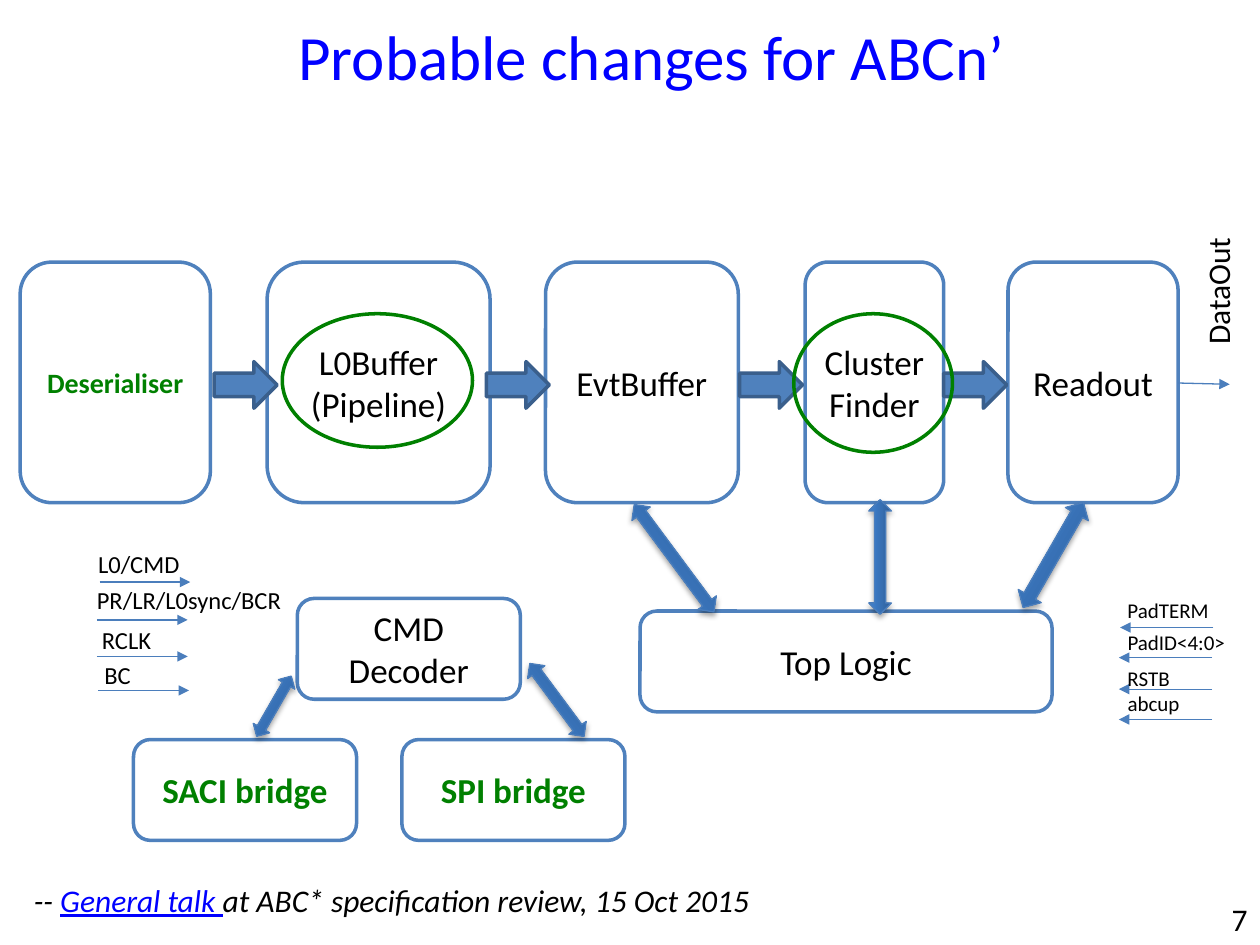
from copy import deepcopy

from lxml import etree
from pptx import Presentation
from pptx.dml.color import RGBColor
from pptx.enum import shapes as kinds, text as align
from pptx.oxml.ns import qn
from pptx.util import Inches, Pt

THEME = {
    "font": "Calibri",
    "black": "000000", "white": "FFFFFF", "blue": "0000FF", "new": "008000",
    "block_line": "4F81BD", "flow_line": "3A5F8C", "thin_line": "4B7EBC",
    "gradient": [(0, "2F5F99"), (0.8, "3D7CC7"), (1, "3A7CCB")],
    "title": 36, "block": 20, "body": 18, "small_block": 16, "input": 14, "pad": 12,
    "thick": 2, "thin": 0.75,
}

# Content: text, left, width (blocks added to the design are marked new)
TITLE = "Probable changes for ABCn’"
PIPELINE_TOP, PIPELINE_HEIGHT = 2.08, 1.91
PIPELINE = [
    ("Deserialiser", 0.16, 1.51, "small_block", True),
    ("L0Buffer\n(Pipeline)", 2.12, 1.77, "block", False),
    ("EvtBuffer", 4.33, 1.53, "block", False),
    ("Cluster\nFinder", 6.39, 1.1, "block", False),
    ("Readout", 8, 1.35, "block", False),
]
FLOW_LEFTS = [1.7, 3.86, 5.87, 7.49]
# Text, left, top, width, new
CONTROL_HEIGHT = 0.8
CONTROL = [
    ("CMD Decoder", 2.36, 4.75, 1.77, False),
    ("Top Logic", 5.08, 4.85, 3.27, False),
    ("SACI bridge", 1.06, 5.87, 1.77, True),
    ("SPI bridge", 3.19, 5.87, 1.77, True),
]
# Left, top, width, height, rotation
LINKS = [
    (7.88, 4.3, 0.96, 0.21, 299.9),
    (4.82, 4.34, 1.06, 0.18, 233.4),
    (6.53, 4.33, 0.91, 0.18, 270),
    (4.06, 5.47, 0.72, 0.17, 233.4),
    (1.9, 5.53, 0.55, 0.15, 299.9),
]
HIGHLIGHTS = [(2.24, 2.49, 1.51, 1.06), (6.3, 2.49, 1.26, 1.1)]
# Text, left, top, width, then arrow start, arrow y
INPUTS = [
    ("L0/CMD", 0.68, 4.31, 0.85, 0.79, 4.62),
    ("PR/LR/L0sync/BCR", 0.67, 4.59, 1.67, 0.77, 4.92),
    ("RCLK", 0.71, 4.91, 0.61, 0.77, 5.21),
    ("BC", 0.73, 5.19, 0.41, 0.78, 5.48),
]
PADS = [
    ("PadTERM", 8.85, 4.69, 0.86, 9.63, 4.98),
    ("PadID<4:0>", 8.85, 4.95, 0.99, 9.62, 5.22),
    ("RSTB", 8.85, 5.23, 0.54, 9.62, 5.47),
    ("abcup", 8.85, 5.43, 0.62, 9.62, 5.71),
]
# Text, colour, underlined
SOURCE = [
    ("-- ", "black", False),
    ("General talk ", "blue", True),
    ("at ABC* specification review, 15 Oct 2015", "black", False),
]


def color(name):
    return RGBColor.from_string(THEME.get(name, name))


def format_text(frame, size, ink="black", bold=None, alignment=None):
    for paragraph in frame.paragraphs:
        paragraph.alignment = alignment
        font = paragraph.font
        font.name, font.size, font.bold = THEME["font"], Pt(THEME[size]), bold
        font.color.rgb = color(ink)


def add_shape(kind, box, fill, line, weight="thick"):
    shape = slide.shapes.add_shape(kind, *map(Inches, box))
    shape.shadow.inherit = False
    if fill:
        shape.fill.solid()
        shape.fill.fore_color.rgb = color(fill)
    else:
        shape.fill.background()
    shape.line.color.rgb = color(line)
    shape.line.width = Pt(THEME[weight])
    return shape


def add_block(text, box, size, new):
    shape = add_shape(kinds.MSO_SHAPE.ROUNDED_RECTANGLE, box, "white", "block_line")
    shape.text_frame.text = text
    shape.text_frame.vertical_anchor = align.MSO_ANCHOR.MIDDLE
    format_text(shape.text_frame, size, "new" if new else "black", new,
                align.PP_ALIGN.CENTER)


def add_link(left, top, width, height, rotation):
    arrow = add_shape(kinds.MSO_SHAPE.LEFT_RIGHT_ARROW, (left, top, width, height),
                      None, "thin_line", "thin")
    arrow.rotation = rotation
    arrow.fill.gradient()
    arrow.fill.gradient_angle = 90
    properties = arrow._element.spPr
    stop_list = properties.find(qn("a:gradFill")).find(qn("a:gsLst"))
    stop_list.append(deepcopy(stop_list[-1]))
    for stop, (position, ink) in zip(arrow.fill.gradient_stops, THEME["gradient"]):
        stop.position = position
        stop.color.rgb = color(ink)
    shadow = etree.SubElement(
        properties.find(qn("a:effectLst")), qn("a:outerShdw"),
        blurRad=str(Pt(3.1)), dist=str(Pt(1.8)), dir="5400000", rotWithShape="0")
    ink = etree.SubElement(shadow, qn("a:srgbClr"), val=THEME["black"])
    etree.SubElement(ink, qn("a:alpha"), val="35000")


def add_signal_arrow(*ends):
    connector = slide.shapes.add_connector(
        kinds.MSO_CONNECTOR.STRAIGHT, *map(Inches, ends))
    connector.line.color.rgb = color("thin_line")
    connector.line.width = Pt(THEME["thin"])
    etree.SubElement(connector.line._get_or_add_ln(), qn("a:tailEnd"), type="triangle")
    etree.SubElement(connector._element.spPr, qn("a:effectLst"))


def add_label(text, box, size, wrap=False, alignment=None):
    label = slide.shapes.add_textbox(*map(Inches, box))
    label.text_frame.word_wrap = wrap
    label.text_frame.text = text
    format_text(label.text_frame, size, alignment=alignment)
    return label


presentation = Presentation()
presentation.slide_width, presentation.slide_height = Inches(10), Inches(7.5)
slide = presentation.slides.add_slide(presentation.slide_layouts[5])

# Title
title = slide.shapes.title
title.left, title.top, title.width, title.height = map(Inches, (0.67, 0.13, 9, 0.62))
title.text_frame.text = TITLE
title.text_frame.vertical_anchor = align.MSO_ANCHOR.MIDDLE
format_text(title.text_frame, "title", "blue", alignment=align.PP_ALIGN.CENTER)

# Data pipeline
for text, left, width, size, new in PIPELINE:
    add_block(text, (left, PIPELINE_TOP, width, PIPELINE_HEIGHT), size, new)
for left in FLOW_LEFTS:
    add_shape(kinds.MSO_SHAPE.RIGHT_ARROW, (left, 2.87, 0.5, 0.37),
              "block_line", "flow_line")
add_signal_arrow(9.35, 3.04, 9.76, 3.05)
add_label("DataOut", (9.13, 2.1, 1.07, 0.4), "body").rotation = 270

# Control blocks and their links
for text, left, top, width, new in CONTROL:
    add_block(text, (left, top, width, CONTROL_HEIGHT), "block", new)
for link in LINKS:
    add_link(*link)

# Signals: inputs point right, pads point left
for signals, size, height, reach in ((INPUTS, "input", 0.34, 0.72),
                                     (PADS, "pad", 0.3, -0.74)):
    for text, left, top, width, start, y in signals:
        add_signal_arrow(start, y, start + reach, y)
        add_label(text, (left, top, width, height), size)

# Rings around the changed blocks
for ring in HIGHLIGHTS:
    add_shape(kinds.MSO_SHAPE.OVAL, ring, None, "new")

# Source line and page number
source = add_label("", (0.17, 6.94, 8.18, 0.4), "body", wrap=True)
paragraph = source.text_frame.paragraphs[0]
paragraph.space_after = Pt(6)
paragraph.font.italic = True
for text, ink, underlined in SOURCE:
    run = paragraph.add_run()
    run.text = text
    run.font.color.rgb = color(ink)
    run.font.underline = underlined
number = add_label("7", (9.25, 7.09, 0.75, 0.4), "body", True, align.PP_ALIGN.RIGHT)
number.text_frame.vertical_anchor = align.MSO_ANCHOR.MIDDLE

presentation.save("out.pptx")
